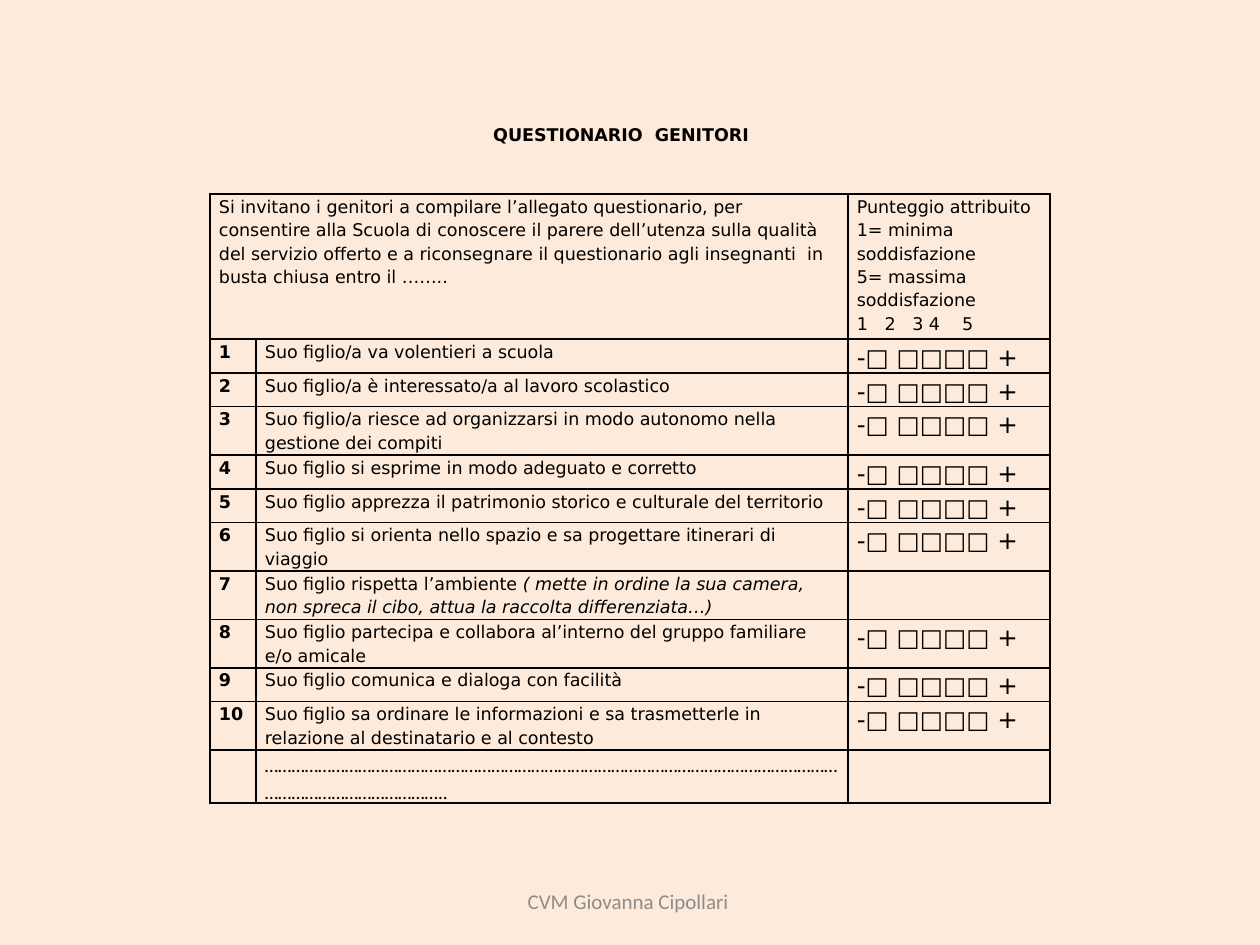
from lxml.etree import SubElement
from pptx import Presentation
from pptx.dml.color import RGBColor
from pptx.enum.text import MSO_ANCHOR, PP_ALIGN
from pptx.oxml import parse_xml
from pptx.oxml.ns import nsdecls
from pptx.util import Pt

# Content
TITLE = "QUESTIONARIO  GENITORI "
FOOTER = "CVM Giovanna Cipollari "
INTRO = ("Si invitano i genitori a compilare l’allegato questionario, per consentire alla "
         "Scuola di conoscere il parere dell’utenza sulla qualità del servizio offerto e a "
         "riconsegnare il questionario agli insegnanti  in busta chiusa entro il ……..")
SCORE_KEY = ["Punteggio attribuito", "1= minima soddisfazione",
             "5= massima soddisfazione", "1   2   3 4    5"]
SCORE_BOXES = "-□ □□□□ +"
# Question, italic remark, lines of text
QUESTIONS = [
    ("Suo figlio/a va volentieri a scuola", "", 1),
    ("Suo figlio/a è interessato/a al lavoro scolastico", "", 1),
    ("Suo figlio/a riesce ad organizzarsi in modo autonomo nella gestione dei compiti", "", 2),
    ("Suo figlio si esprime in modo adeguato e corretto", "", 1),
    ("Suo figlio apprezza il patrimonio storico e culturale del territorio", "", 1),
    ("Suo figlio si orienta nello spazio e sa progettare itinerari di viaggio", "", 2),
    ("Suo figlio rispetta l’ambiente ",
     "( mette in ordine la sua camera, non spreca il cibo, attua la raccolta differenziata…)", 2),
    ("Suo figlio partecipa e collabora al’interno del gruppo familiare e/o amicale", "", 2),
    ("Suo figlio comunica e dialoga con facilità", "", 1),
    ("Suo figlio sa ordinare le informazioni e sa trasmetterle in relazione al destinatario "
     "e al contesto", "", 2),
]
UNSCORED = 7
DOTS = "…" * 56 + ".."

# Look and measures
BACKGROUND = RGBColor(0xFD, 0xEA, 0xDA)
BLACK = RGBColor(0, 0, 0)
GRAY = RGBColor(0x8C, 0x8C, 0x8C)
BODY = {"name": "DejaVu Sans", "size": Pt(10), "bold": False, "italic": False}
BOLD = {**BODY, "bold": True}
ITALIC = {**BODY, "italic": True}
BOXES = {**BODY, "size": Pt(14)}
DOTTED = {**BODY, "name": "Calibri", "size": Pt(11)}
FOOTER_FONT = {**BODY, "name": "Calibri", "size": Pt(12)}
COLUMNS = [46, 592, 202]
HEADER_HEIGHT = 142
LINE_HEIGHTS = {1: 33, 2: 47}
TABLE_LEFT, TABLE_TOP = 210, 194


def px(value):
    return round(value * 914400 / 126)


def add_run(paragraph, text, style, color=BLACK):
    run = paragraph.add_run()
    run.text = text
    for name, value in style.items():
        setattr(run.font, name, value)
    run.font.color.rgb = color


def place_line(shape, box, text, style, color):
    """Put one centred line of text in a box."""
    shape.left, shape.top, shape.width, shape.height = map(px, box)
    frame = shape.text_frame
    frame.word_wrap = True
    frame.vertical_anchor = MSO_ANCHOR.MIDDLE
    paragraph = frame.paragraphs[0]
    paragraph.alignment = PP_ALIGN.CENTER
    add_run(paragraph, text, style, color)


def fill_cell(cell, paragraphs):
    """Write paragraphs, each a list of (text, style) runs."""
    for index, runs in enumerate(paragraphs):
        frame = cell.text_frame
        paragraph = frame.add_paragraph() if index else frame.paragraphs[0]
        paragraph.line_spacing = 1.15
        for text, style in runs:
            if text:
                add_run(paragraph, text, style)


def format_cell(cell):
    margins = {"margin_left": px(9), "margin_right": px(9), "margin_top": 0, "margin_bottom": 0}
    for name, value in margins.items():
        setattr(cell, name, value)
    cell.fill.background()
    properties = cell._tc.get_or_add_tcPr()
    for index, side in enumerate(("lnL", "lnR", "lnT", "lnB")):
        line = parse_xml(f'<a:{side} {nsdecls("a")} w="{Pt(1)}"/>')
        fill = SubElement(line, f"{{{line.nsmap['a']}}}solidFill")
        SubElement(fill, f"{{{line.nsmap['a']}}}srgbClr", val=str(BLACK))
        properties.insert(index, line)


presentation = Presentation()
presentation.slide_width, presentation.slide_height = px(1260), px(945)
slide = presentation.slides.add_slide(presentation.slide_layouts[5])
slide.background.fill.solid()
slide.background.fill.fore_color.rgb = BACKGROUND

# Title and footer
place_line(slide.shapes.title, (472, 118, 304, 34), TITLE, BOLD, BLACK)
place_line(slide.shapes.add_textbox(0, 0, 0, 0), (431, 876, 399, 50), FOOTER, FOOTER_FONT, GRAY)

# Questionnaire rows: number, question, score
rows = [([[(INTRO, BODY)]], [], [[(line, BODY)] for line in SCORE_KEY])]
for number, (question, remark, _) in enumerate(QUESTIONS, 1):
    score = [] if number == UNSCORED else [[(SCORE_BOXES, BOXES)]]
    rows.append(([[(str(number), BOLD)]], [[(question, BODY), (remark, ITALIC)]], score))
rows.append(([], [[(DOTS, DOTTED)]], []))
heights = [HEADER_HEIGHT, *(LINE_HEIGHTS[lines] for _, _, lines in QUESTIONS), LINE_HEIGHTS[2]]

# Table
table = slide.shapes.add_table(len(rows), len(COLUMNS), px(TABLE_LEFT), px(TABLE_TOP),
                               px(sum(COLUMNS)), px(sum(heights))).table
table.first_row = table.horz_banding = False
for column, width in zip(table.columns, COLUMNS):
    column.width = px(width)
for row, height, contents in zip(table.rows, heights, rows):
    row.height = px(height)
    for cell, paragraphs in zip(row.cells, contents):
        format_cell(cell)
        fill_cell(cell, paragraphs)
table.cell(0, 0).merge(table.cell(0, 1))

presentation.save("out.pptx")
